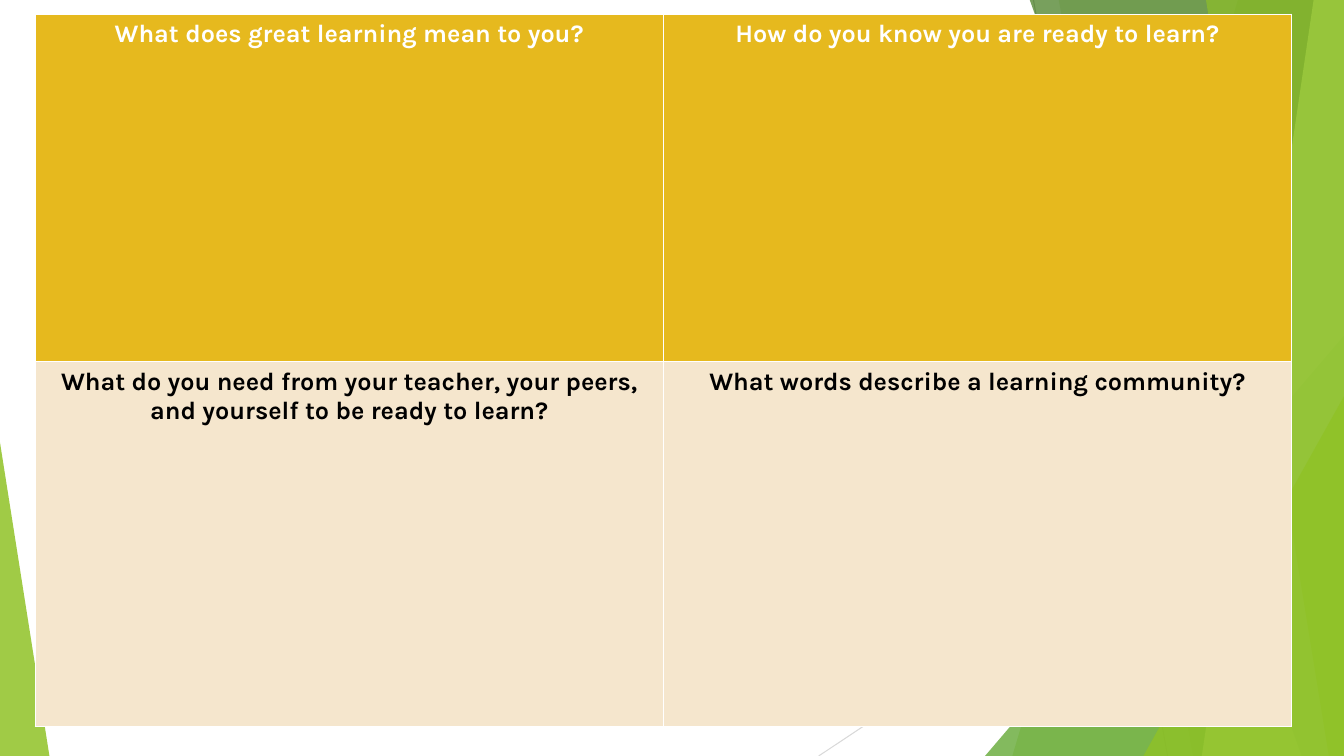
from lxml import etree
from pptx import Presentation
from pptx.dml.color import RGBColor
from pptx.enum import shapes, text
from pptx.oxml import ns
from pptx.util import Inches, Pt

COLORS = {
    "white": "FFFFFF", "black": "000000", "gold": "E6B91E", "cream": "F5E6CD",
    "gray": "BFBFBF", "pale gray": "D9D9D9", "green": "90C226",
    "mid green": "54A021", "dark green": "3F7819", "lime": "C0E474",
}
WIDTH, HEIGHT = 13.33, 7.5


def color(name):
    return RGBColor.from_string(COLORS[name])


def add_child(parent, tag, **attributes):
    return etree.SubElement(parent, ns.qn(tag), attributes)


prs = Presentation()
prs.slide_width, prs.slide_height = Inches(WIDTH), Inches(HEIGHT)
slide = prs.slides.add_slide(prs.slide_layouts[6])

for x1, y1, x2, y2, line_color in [
    (10.25, 0, 11.58, HEIGHT, "gray"),
    (WIDTH, 4.03, 8.12, HEIGHT, "pale gray"),
]:
    ray = slide.shapes.add_connector(
        shapes.MSO_CONNECTOR.STRAIGHT, Inches(x1), Inches(y1), Inches(x2), Inches(y2))
    ray.line.color.rgb = color(line_color)
    ray.line.width = Pt(0.75)
    add_child(ray._element.spPr, "a:effectLst")

facets = [
    ("band", (12.28, 10.04), "green", 30),
    ("band", (10.5, 11.83), "green", 20),
    ("triangle", (9.77, 3.33, 3.56, 1), "mid green", 72),
    ("band", (10.21, 12.91), "dark green", 70),
    ("band", (13.03, 11.92), "lime", 70),
    ("band", (11.96, 13.18), "green", 65),
    ("triangle", (11.34, 3.93, 1.99, 1), "green", 80),
    ("triangle", (0, 4.39, 0.49, 0), "green", 85),
]
for kind, geometry, fill_color, opacity in facets:
    if kind == "band":
        top_x, bottom_x = geometry
        outline = slide.shapes.build_freeform(Inches(top_x), Inches(-0.01))
        corners = [(WIDTH, -0.01), (WIDTH, HEIGHT), (bottom_x, HEIGHT)]
        outline.add_line_segments([(Inches(x), Inches(y)) for x, y in corners])
        facet = outline.convert_to_shape()
    else:
        left, top, width, lean = geometry
        facet = slide.shapes.add_shape(
            shapes.MSO_SHAPE.ISOSCELES_TRIANGLE,
            Inches(left), Inches(top), Inches(width), Inches(HEIGHT - top))
        facet.adjustments[0] = lean
    facet.shadow.inherit = False
    facet.line.fill.background()
    facet.fill.solid()
    facet.fill.fore_color.rgb = color(fill_color)
    tint = facet._element.spPr.find(".//" + ns.qn("a:srgbClr"))
    add_child(tint, "a:alpha", val=str(opacity * 1000))

questions = [
    ("gold", "white", [
        "What does great learning mean to you?",
        "How do you know you are ready to learn?"]),
    ("cream", "black", [
        "What do you need from your teacher, your peers, and yourself to be ready to learn?",
        "What words describe a learning community?"]),
]
row_heights = [3.45, 3.62]
grid = slide.shapes.add_table(
    2, 2, Inches(0.35), Inches(0.14), Inches(12.46), Inches(sum(row_heights))).table
for row, (fill_color, font_color, prompts) in enumerate(questions):
    grid.rows[row].height = Inches(row_heights[row])
    for column, prompt in enumerate(prompts):
        cell = grid.cell(row, column)
        cell.text_frame.text = prompt
        paragraph = cell.text_frame.paragraphs[0]
        paragraph.alignment = text.PP_ALIGN.CENTER
        font = paragraph.runs[0].font
        font.name, font.size, font.bold = "Karla", Pt(18), True
        font.color.rgb = color(font_color)
        properties = cell._tc.get_or_add_tcPr()
        for side in ("a:lnL", "a:lnR", "a:lnT", "a:lnB"):
            border = add_child(properties, side, w=str(Pt(1)))
            border_fill = add_child(border, "a:solidFill")
            add_child(border_fill, "a:srgbClr", val=COLORS["white"])
        cell.fill.solid()
        cell.fill.fore_color.rgb = color(fill_color)

prs.save("out.pptx")
